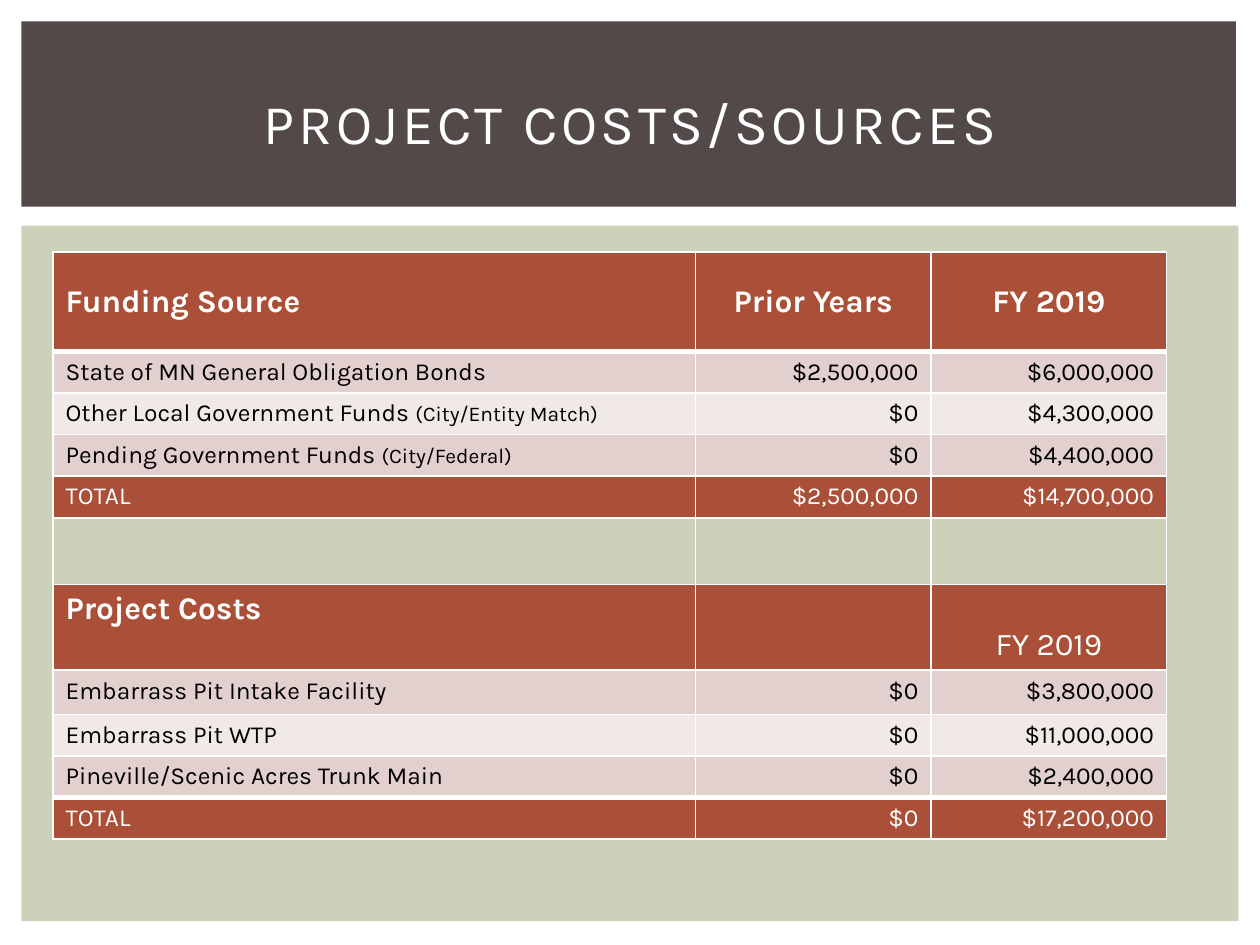
from lxml import etree
from pptx import Presentation
from pptx.dml.color import RGBColor
from pptx.enum.shapes import MSO_SHAPE
from pptx.enum.text import MSO_ANCHOR, PP_ALIGN
from pptx.oxml.ns import qn
from pptx.util import Inches, Pt

RECTANGLE = MSO_SHAPE.RECTANGLE
LEFT, CENTER, RIGHT = PP_ALIGN.LEFT, PP_ALIGN.CENTER, PP_ALIGN.RIGHT
TOP, MIDDLE, BOTTOM = MSO_ANCHOR.TOP, MSO_ANCHOR.MIDDLE, MSO_ANCHOR.BOTTOM

FONT = "Karla"
COLORS = {
    "white": "FFFFFF",
    "black": "000000",
    "sage": "CCD1B9",
    "brown": "534949",
    "rust": "AA5038",
    "dark band": "E2D0CE",
    "light band": "F1E9E8",
}
COLUMN_WIDTHS = [5.1, 1.87, 1.87]
# Fill, row height, then the text of each column
ROWS = [
    ("rust", 0.79, ["Funding Source", "Prior Years", "FY 2019"]),
    ("dark band", 0.33, ["State of MN General Obligation Bonds", "$2,500,000", "$6,000,000"]),
    ("light band", 0.33, ["Other Local Government Funds (City/Entity Match)", "$0", "$4,300,000"]),
    ("dark band", 0.33, ["Pending Government Funds (City/Federal)", "$0", "$4,400,000"]),
    ("rust", 0.33, ["TOTAL", "$2,500,000", "$14,700,000"]),
    (None, 0.53, ["", "", ""]),
    ("rust", 0.68, ["Project Costs", "", "FY 2019"]),
    ("dark band", 0.35, ["Embarrass Pit Intake Facility", "$0", "$3,800,000"]),
    ("light band", 0.33, ["Embarrass Pit WTP", "$0", "$11,000,000"]),
    ("dark band", 0.33, ["Pineville/Scenic Acres Trunk Main", "$0", "$2,400,000"]),
    ("rust", 0.33, ["TOTAL", "$0", "$17,200,000"]),
]
FUNDING_HEADER, COSTS_HEADER = 0, 6
THICK_RULES = {1, len(ROWS) - 1}  # rows with a heavy line above them


def rgb(name):
    return RGBColor.from_string(COLORS[name])


def style_run(run, size, color, bold=False):
    run.font.name = FONT
    run.font.size = Pt(size)
    run.font.bold = bold
    run.font.color.rgb = rgb(color)


def add_panel(slide, left, top, width, height, color):
    panel = slide.shapes.add_shape(
        RECTANGLE, Inches(left), Inches(top), Inches(width), Inches(height))
    panel.shadow.inherit = False
    panel.fill.solid()
    panel.fill.fore_color.rgb = rgb(color)
    panel.line.fill.background()


def add_title(slide, text):
    title = slide.shapes.add_textbox(Inches(0.42), Inches(0.39), Inches(9.17), Inches(1.15))
    frame = title.text_frame
    frame.word_wrap = True
    frame.vertical_anchor = MIDDLE
    frame.text = text
    frame.paragraphs[0].alignment = CENTER
    run = frame.paragraphs[0].runs[0]
    style_run(run, 32, "white")
    run.font._element.set("spc", "200")


def set_borders(cell, top, bottom):
    """Draw white cell borders; top and bottom are widths in points."""
    properties = cell._tc.get_or_add_tcPr()
    for side, width in (("L", 1), ("R", 1), ("T", top), ("B", bottom)):
        line = etree.SubElement(properties, qn(f"a:ln{side}"), w=str(Pt(width)))
        fill = etree.SubElement(line, qn("a:solidFill"))
        etree.SubElement(fill, qn("a:srgbClr"), val=COLORS["white"])


def set_fill(cell, color):
    if color:
        cell.fill.solid()
        cell.fill.fore_color.rgb = rgb(color)
    else:
        cell.fill.background()


def write_cell(cell, text, row, column, color):
    """Write the text, with a bracketed remark in a smaller size."""
    header = row in (FUNDING_HEADER, COSTS_HEADER)
    paragraph = cell.text_frame.paragraphs[0]
    paragraph.alignment = LEFT if column == 0 else CENTER if header else RIGHT
    if row == FUNDING_HEADER:
        cell.vertical_anchor = MIDDLE
    else:
        cell.vertical_anchor = BOTTOM if header and column else TOP

    label, bracket, remark = text.partition("(")
    bold = row == FUNDING_HEADER or (header and column == 0)
    for part, size in ((label, 18 if header else 14), (bracket + remark, 12)):
        if part:
            run = paragraph.add_run()
            run.text = part
            style_run(run, size, color, bold)


def add_cost_table(slide):
    heights = [height for _, height, _ in ROWS]
    table = slide.shapes.add_table(
        len(ROWS), len(COLUMN_WIDTHS), Inches(0.42), Inches(2),
        Inches(sum(COLUMN_WIDTHS)), Inches(sum(heights))).table
    table.first_row = table.horz_banding = False
    for column, width in zip(table.columns, COLUMN_WIDTHS):
        column.width = Inches(width)
    for r, (fill, height, texts) in enumerate(ROWS):
        table.rows[r].height = Inches(height)
        above, below = (3 if edge in THICK_RULES else 1 for edge in (r, r + 1))
        for c, text in enumerate(texts):
            cell = table.cell(r, c)
            set_borders(cell, above, below)
            set_fill(cell, fill)
            write_cell(cell, text, r, c, "white" if fill == "rust" else "black")


def main():
    deck = Presentation()
    deck.slide_width, deck.slide_height = Inches(10), Inches(7.5)
    slide = deck.slides.add_slide(deck.slide_layouts[6])
    add_panel(slide, 0.17, 1.79, 9.66, 5.52, "sage")
    add_panel(slide, 0.17, 0.17, 9.64, 1.47, "brown")
    add_cost_table(slide)
    add_title(slide, "PROJECT COSTS/SOURCES")
    deck.save("out.pptx")


if __name__ == "__main__":
    main()
